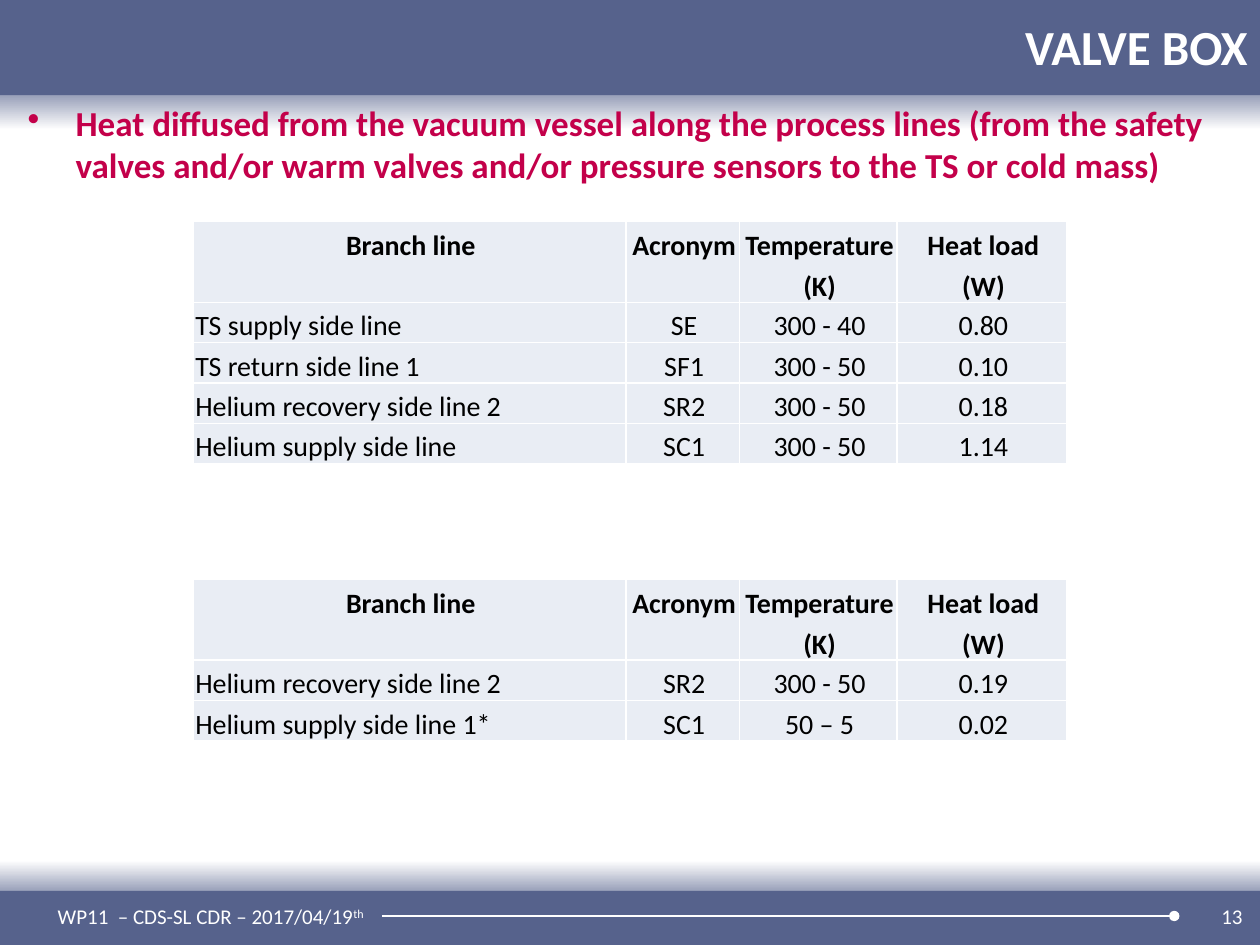
from dataclasses import dataclass
from pptx import Presentation
from pptx.dml.color import RGBColor
from pptx.enum.shapes import MSO_CONNECTOR, MSO_SHAPE
from pptx.enum.text import MSO_ANCHOR, PP_ALIGN
from pptx.oxml import parse_xml
from pptx.oxml.ns import nsdecls
from pptx.util import Inches, Pt


@dataclass(frozen=True)
class Theme:
    font: str = "Calibri"
    band: str = "56628C"
    fade: str = "9AA1BA"
    white: str = "FFFFFF"
    accent: str = "C3004A"
    ink: str = "000000"
    cell: str = "E9EDF4"
    title_size: int = 28
    body_size: int = 20
    table_size: int = 16
    footer_size: int = 12


THEME = Theme()
TITLE = "VALVE BOX"
MESSAGE = ("Heat diffused from the vacuum vessel along the process lines (from the safety "
           "valves and/or warm valves and/or pressure sensors to the TS or cold mass)")
FOOTER, FOOTER_SUFFIX = "WP11  – CDS-SL CDR – 2017/04/19", "th"
PAGE_NUMBER = "13"
HEADER = ["Branch line", "Acronym", "Temperature\n(K)", "Heat load\n(W)"]
TABLES = [
    {"top": 1.76, "rows": [
        ["TS supply side line", "SE", "300 - 40", "0.80"],
        ["TS return side line 1", "SF1", "300 - 50", "0.10"],
        ["Helium recovery side line 2", "SR2", "300 - 50", "0.18"],
        ["Helium supply side line", "SC1", "300 - 50", "1.14"]]},
    {"top": 4.6, "rows": [
        ["Helium recovery side line 2", "SR2", "300 - 50", "0.19"],
        ["Helium supply side line 1*", "SC1", "50 – 5", "0.02"]]},
]

WIDTH, HEIGHT = 10, 7.5
HEAD, FOOT = 0.76, 0.43
FOOT_TOP = HEIGHT - FOOT
TOP_FADE, BOTTOM_FADE = 0.27, 0.24
FOOT_TEXT_HEIGHT = 0.4
TABLE_LEFT, ROW_HEIGHT = 1.53, 0.32
COLUMNS = [3.44, 0.9, 1.25, 1.35]
CELL_INDENT, BULLET_INDENT = 0.02, 0.38

deck = Presentation()
deck.slide_width, deck.slide_height = Inches(WIDTH), Inches(HEIGHT)
page = deck.slides.add_slide(deck.slide_layouts[6])


def color(value):
    return RGBColor.from_string(value)


def add_band(top, height, start, end=None):
    """Full-width band, plain or fading downwards from start to end."""
    band = page.shapes.add_shape(MSO_SHAPE.RECTANGLE, 0, Inches(top), Inches(WIDTH), Inches(height))
    band.shadow.inherit = False
    band.line.fill.background()
    if end is None:
        band.fill.solid()
        band.fill.fore_color.rgb = color(start)
        return
    band.fill.gradient()
    band.fill.gradient_angle = 270
    for stop, shade in zip(band.fill.gradient_stops, (start, end)):
        stop.color.rgb = color(shade)


def write(frame, text, *, size, ink, bold=False, align=PP_ALIGN.LEFT, spacing=None,
          indent=0, bullet=None, superscript=None):
    for index, line in enumerate(text.split("\n")):
        para = frame.add_paragraph() if index else frame.paragraphs[0]
        para.alignment = align
        if spacing:
            para.line_spacing = spacing
        properties = para._p.get_or_add_pPr()
        properties.set("marL", str(Inches(indent)))
        properties.set("indent", str(-Inches(indent) if bullet else 0))
        if bullet:
            properties.append(parse_xml(f'<a:buChar {nsdecls("a")} char="{bullet}"/>'))
        for part in filter(None, (line, superscript)):
            span = para.add_run()
            span.text = part
            span.font.name, span.font.size, span.font.bold = THEME.font, Pt(size), bold
            span.font.color.rgb = color(ink)
        if superscript:
            span.font._element.set("baseline", "30000")


def add_text(text, left, top, width, height, *, anchor=MSO_ANCHOR.MIDDLE,
             insets=(0.1, 0.05, 0.1, 0.05), **style):
    box = page.shapes.add_textbox(*map(Inches, (left, top, width, height)))
    frame = box.text_frame
    frame.word_wrap = True
    frame.vertical_anchor = anchor
    frame.margin_left, frame.margin_top, frame.margin_right, frame.margin_bottom = map(Inches, insets)
    write(frame, text, **style)


def style_cell(cell):
    cell.margin_left = cell.margin_right = cell.margin_top = cell.margin_bottom = 0
    cell.fill.solid()
    cell.fill.fore_color.rgb = color(THEME.cell)
    properties = cell._tc.get_or_add_tcPr()
    for index, side in enumerate("LRTB"):
        properties.insert(index, parse_xml(
            f'<a:ln{side} {nsdecls("a")} w="{Pt(1)}"><a:solidFill>'
            f'<a:srgbClr val="{THEME.white}"/></a:solidFill></a:ln{side}>'))


def add_heat_table(top, rows):
    cells = [HEADER] + rows
    height = ROW_HEIGHT * (len(cells) + 1)
    table = page.shapes.add_table(len(cells), len(COLUMNS), Inches(TABLE_LEFT), Inches(top),
                                  Inches(sum(COLUMNS)), Inches(height)).table
    table.first_row = table.horz_banding = False
    for column, width in zip(table.columns, COLUMNS):
        column.width = Inches(width)
    for r, values in enumerate(cells):
        heading = r == 0
        table.rows[r].height = Inches(ROW_HEIGHT * (2 if heading else 1))
        for c, value in enumerate(values):
            cell = table.cell(r, c)
            style_cell(cell)
            cell.vertical_anchor = MSO_ANCHOR.TOP if heading else MSO_ANCHOR.MIDDLE
            align = PP_ALIGN.CENTER if heading or c else PP_ALIGN.JUSTIFY
            write(cell.text_frame, value, size=THEME.table_size, ink=THEME.ink, bold=heading,
                  align=align, spacing=1.2, indent=CELL_INDENT)


def add_footer_line(left, right, y):
    line = page.shapes.add_connector(MSO_CONNECTOR.STRAIGHT, *map(Inches, (left, y, right, y)))
    line.line.color.rgb = color(THEME.white)
    line.line.width = Pt(1.5)
    line.line._get_or_add_ln().append(parse_xml(f'<a:tailEnd {nsdecls("a")} type="oval"/>'))
    line._element.spPr.append(parse_xml(f'<a:effectLst {nsdecls("a")}/>'))


add_band(0, HEAD, THEME.band)
add_band(HEAD, TOP_FADE, THEME.fade, THEME.white)
add_band(FOOT_TOP - BOTTOM_FADE, BOTTOM_FADE, THEME.white, THEME.fade)
add_band(FOOT_TOP, FOOT, THEME.band)
add_footer_line(3.03, 9.32, 7.27)
footer_style = {"size": THEME.footer_size, "ink": THEME.white}
add_text(FOOTER, 0.36, FOOT_TOP, 3.53, FOOT_TEXT_HEIGHT, superscript=FOOTER_SUFFIX, **footer_style)
add_text(PAGE_NUMBER, 7.63, FOOT_TOP, 2.33, FOOT_TEXT_HEIGHT, align=PP_ALIGN.RIGHT, **footer_style)
add_text(TITLE, 1.06, -0.03, WIDTH - 1.06, HEAD + 0.03, size=THEME.title_size,
         ink=THEME.white, bold=True, align=PP_ALIGN.RIGHT)
add_text(MESSAGE, 0.2, HEAD, WIDTH - 0.2, FOOT_TOP - HEAD, anchor=MSO_ANCHOR.TOP,
         insets=(0.02, 0.05, 0.02, 0.02), size=THEME.body_size, ink=THEME.accent,
         bold=True, indent=BULLET_INDENT, bullet="•")
for heat_table in TABLES:
    add_heat_table(**heat_table)

deck.save("out.pptx")
